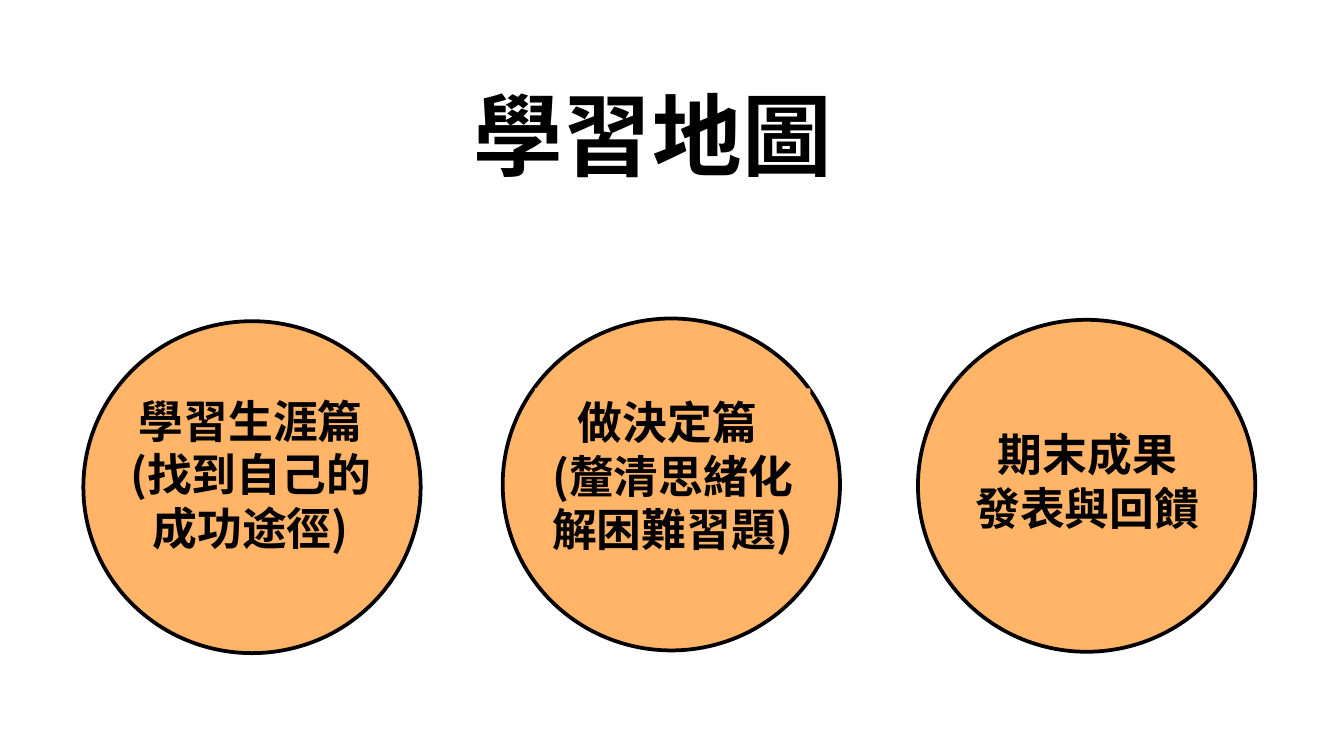
from lxml import etree
from pptx import Presentation
from pptx.dml.color import RGBColor
from pptx.enum import shapes, text
from pptx.oxml import ns
from pptx.util import Pt

FONT = "Noto Sans CJK SC"
ORANGE, BLACK = "FFB468", "000000"
TITLE = "學習地圖"
CIRCLE_WIDTH, CIRCLE_HEIGHT = 180.72, 177.84
MIDDLE, TOP = text.MSO_ANCHOR.MIDDLE, text.MSO_ANCHOR.TOP

# circle left and top, label box, label anchor, label insets (x, y), label lines
STAGES = [
    ((44.64, 172.08), (66.96, 208.08, 134.64, 91.44), MIDDLE, (2.16, 2.16),
     ["學習生涯篇", "(找到自己的", "成功途徑)"]),
    ((269.28, 170.64), (286.56, 208.08, 147.6, 94.32), TOP, (7.2, 3.6),
     ["做決定篇 ", "(釐清思緒化解困難習題)"]),
    ((491.76, 171.36), (519.84, 226.08, 125.28, 62.64), MIDDLE, (2.16, 2.16),
     ["期末成果", "發表與回饋"]),
]


def color(value):
    return RGBColor.from_string(value)


def write(box, lines, size, spacing, anchor, insets):
    """Fill a box with centred bold lines at a fixed line pitch."""
    frame = box.text_frame
    frame.text = "\n".join(lines)
    frame.word_wrap = True
    frame.auto_size = text.MSO_AUTO_SIZE.NONE
    frame.vertical_anchor = anchor
    frame.margin_left = frame.margin_right = Pt(insets[0])
    frame.margin_top = frame.margin_bottom = Pt(insets[1])
    for para in frame.paragraphs:
        para.alignment = text.PP_ALIGN.CENTER
        para.line_spacing = Pt(spacing)
        for span in para.runs:
            span.font.name = FONT
            span.font.size = Pt(size)
            span.font.bold = True
            span.font.color.rgb = color(BLACK)
            east_asian = etree.Element(ns.qn("a:ea"), typeface=FONT)
            span.font._element.find(ns.qn("a:latin")).addnext(east_asian)


def add_filled(page, kind, left, top, width, height):
    shape = page.shapes.add_shape(kind, Pt(left), Pt(top), Pt(width), Pt(height))
    shape.shadow.inherit = False
    shape.fill.solid()
    shape.fill.fore_color.rgb = color(ORANGE)
    return shape


deck = Presentation()
deck.slide_width, deck.slide_height = Pt(720), Pt(405)
page = deck.slides.add_slide(deck.slide_layouts[5])

title = page.shapes.title
title.left, title.top, title.width, title.height = Pt(245.52), Pt(38.88), Pt(208.08), Pt(65.52)
write(title, [TITLE], 48, 58, TOP, (7.2, 3.6))

for corner, label_box, anchor, insets, lines in STAGES:
    circle = add_filled(page, shapes.MSO_SHAPE.OVAL, *corner, CIRCLE_WIDTH, CIRCLE_HEIGHT)
    circle.line.color.rgb = color(BLACK)
    circle.line.width = Pt(2)
    label = add_filled(page, shapes.MSO_SHAPE.RECTANGLE, *label_box)
    label.line.fill.background()
    write(label, lines, 24, 28.7, anchor, insets)

deck.save("out.pptx")
